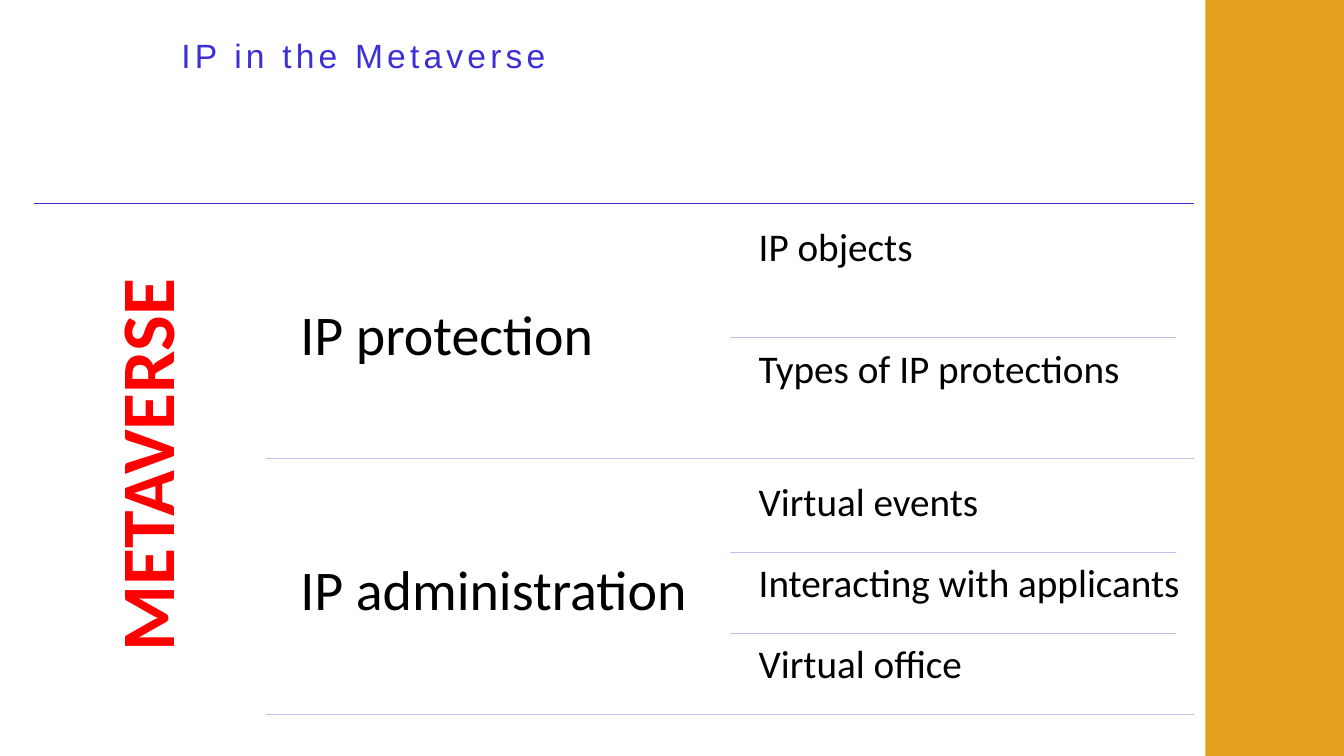
from dataclasses import dataclass

from lxml import etree
from pptx import Presentation
from pptx import util as u
from pptx.dml.color import RGBColor
from pptx.enum import shapes, text
from pptx.oxml.ns import qn

COLOURS = {
    "bar": "E4A11E",
    "title": "3C2FD6",
    "rule": "C0BEEC",
    "topic": "FF0000",
    "body": "000000",
}

LEFT, RIGHT = 0.86, 30.08
SECTION_RULE_X = 6.71
SECTION_X, ITEM_X, COLUMN_W = 7.14, 18.82, 11.26
ITEM_RULE_X, ITEM_RULE_END = 18.39, 29.64
TOP, SECTION_H, GAP = 5.13, 6.12, 0.31


@dataclass
class Section:
    heading: str
    items: list[str]


SECTIONS = [
    Section("IP protection", ["IP objects", "Types of IP protections"]),
    Section("IP administration",
            ["Virtual events", "Interacting with applicants", "Virtual office"]),
]


def rgb(name: str) -> RGBColor:
    return RGBColor.from_string(COLOURS[name])


def add_text(slide, words: str, x: float, y: float, w: float, h: float, *,
             size: float, colour: str = "body", font: str = "Calibri",
             bold: bool = False, inset: tuple[float, float] = (0.3, 0.3),
             anchor=text.MSO_ANCHOR.TOP, align=text.PP_ALIGN.LEFT,
             spacing: float = 0, vertical: str = "") -> None:
    """Add a one-paragraph text box; inset is (horizontal, vertical) in cm."""
    tf = slide.shapes.add_textbox(u.Cm(x), u.Cm(y), u.Cm(w), u.Cm(h)).text_frame
    tf.word_wrap = True
    tf.vertical_anchor = anchor
    tf.margin_left = tf.margin_right = u.Cm(inset[0])
    tf.margin_top = tf.margin_bottom = u.Cm(inset[1])
    if vertical:
        tf._txBody.bodyPr.set("vert", vertical)
    p = tf.paragraphs[0]
    p.alignment = align
    p.line_spacing = 0.9
    r = p.add_run()
    r.text = words
    r.font.name, r.font.size, r.font.bold = font, u.Pt(size), bold
    r.font.color.rgb = rgb(colour)
    if spacing:
        r._r.get_or_add_rPr().set("spc", str(round(spacing * 100)))


def add_rule(slide, x1: float, x2: float, y: float, colour: str = "rule",
             shadow: bool = False) -> None:
    line = slide.shapes.add_connector(
        shapes.MSO_CONNECTOR.STRAIGHT, u.Cm(x1), u.Cm(y), u.Cm(x2), u.Cm(y))
    line.line.color.rgb = rgb(colour)
    line.line.width = u.Pt(0.5)
    effects = etree.SubElement(line._element.spPr, qn("a:effectLst"))
    if shadow:
        outer = etree.SubElement(
            effects, qn("a:outerShdw"), blurRad=str(u.Pt(4.5)),
            dist=str(u.Pt(1.5)), dir="5400000", algn="ctr", rotWithShape="0")
        black = etree.SubElement(outer, qn("a:srgbClr"), val=COLOURS["body"])
        etree.SubElement(black, qn("a:alpha"), val="63000")


def add_section(slide, section: Section, top: float) -> None:
    add_text(slide, section.heading, SECTION_X, top, COLUMN_W, SECTION_H,
             size=40, inset=(0.43, 0.43), anchor=text.MSO_ANCHOR.MIDDLE)
    item_h = SECTION_H / len(section.items)
    for i, item in enumerate(section.items):
        y = top + i * item_h
        if i:
            add_rule(slide, ITEM_RULE_X, ITEM_RULE_END, y)
        add_text(slide, item, ITEM_X, y, COLUMN_W, item_h, size=28)
    add_rule(slide, SECTION_RULE_X, RIGHT, top + SECTION_H)


def main() -> None:
    prs = Presentation()
    prs.slide_width, prs.slide_height = u.Cm(33.87), u.Cm(19.05)
    slide = prs.slides.add_slide(prs.slide_layouts[6])

    bar = slide.shapes.add_shape(shapes.MSO_SHAPE.RECTANGLE, u.Cm(30.38), 0,
                                 u.Cm(3.49), prs.slide_height)
    bar.shadow.inherit = False
    bar.fill.solid()
    bar.fill.fore_color.rgb = rgb("bar")
    bar.line.fill.background()

    add_text(slide, "IP in the Metaverse", 4.32, 0.86, 26.85, 1.17, size=24,
             colour="title", font="Arial", inset=(0.25, 0.13), spacing=3)
    add_rule(slide, LEFT, RIGHT, TOP, colour="title", shadow=True)
    add_text(slide, "METAVERSE", LEFT, TOP, 5.84, 13.18, size=54,
             colour="topic", bold=True, inset=(0.58, 0.58), vertical="vert270",
             anchor=text.MSO_ANCHOR.MIDDLE, align=text.PP_ALIGN.CENTER)
    for i, section in enumerate(SECTIONS):
        add_section(slide, section, TOP + GAP + i * (SECTION_H + GAP))

    prs.save("out.pptx")


if __name__ == "__main__":
    main()
